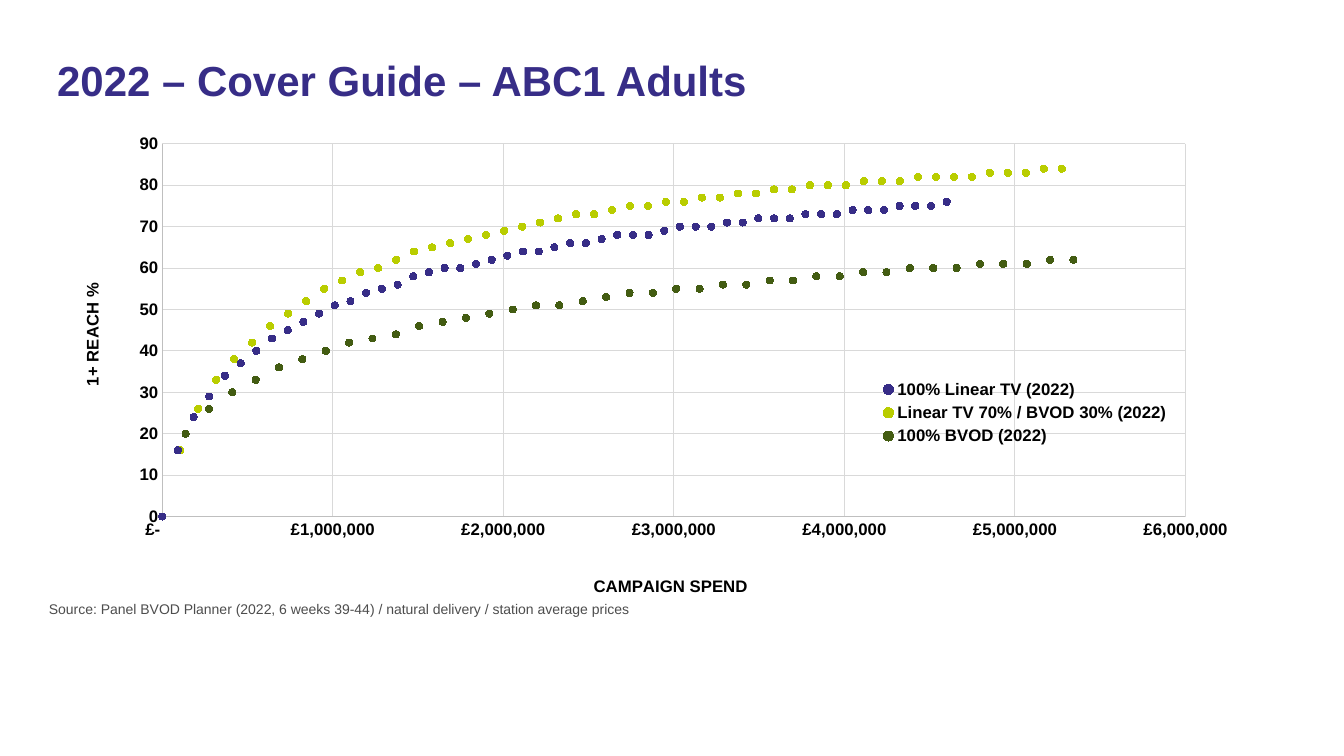
from lxml import etree
from pptx import Presentation, util as u
from pptx.chart.data import XyChartData
from pptx.dml.color import RGBColor
from pptx.enum import chart as charts, text
from pptx.oxml.ns import qn

COLOURS = {
    "title": "372D87",
    "linear": "372D87",
    "mixed": "B9CD00",
    "bvod": "435C12",
    "text": "000000",
    "source": "4D4D4D",
    "grid": "D9D9D9",
    "axis": "BFBFBF",
}

SERIES = [
    ("100% Linear TV (2022)", "linear", 92000,
     [0, 16, 24, 29, 34, 37, 40, 43, 45, 47, 49, 51, 52, 54, 55, 56, 58,
      59, 60, 60, 61, 62, 63, 64, 64, 65, 66, 66, 67, 68, 68, 68, 69, 70,
      70, 70, 71, 71, 72, 72, 72, 73, 73, 73, 74, 74, 74, 75, 75, 75, 76]),
    ("Linear TV 70% / BVOD 30% (2022)", "mixed", 105500,
     [0, 16, 26, 33, 38, 42, 46, 49, 52, 55, 57, 59, 60, 62, 64, 65, 66,
      67, 68, 69, 70, 71, 72, 73, 73, 74, 75, 75, 76, 76, 77, 77, 78, 78,
      79, 79, 80, 80, 80, 81, 81, 81, 82, 82, 82, 82, 83, 83, 83, 84, 84]),
    ("100% BVOD (2022)", "bvod", 137000,
     [0, 20, 26, 30, 33, 36, 38, 40, 42, 43, 44, 46, 47, 48, 49, 50, 51,
      51, 52, 53, 54, 54, 55, 55, 56, 56, 57, 57, 58, 58, 59, 59, 60, 60,
      60, 61, 61, 61, 62, 62]),
]

POUNDS = '_-"£"* #,##0_-;-"£"* #,##0_-;_-"£"* "-"??_-;_-@_-'


class CoverGuide:
    """Holds the slide and its style, and draws each kind of element."""

    EMU_PER_PX = 914400 / 100.8
    FONT = "Arial"

    def __init__(self, presentation):
        presentation.slide_width = self.px(1344)
        presentation.slide_height = self.px(756)
        self.slide = presentation.slides.add_slide(presentation.slide_layouts[5])

    def px(self, length):
        return u.Emu(round(length * self.EMU_PER_PX))

    def colour(self, name):
        return RGBColor.from_string(COLOURS[name])

    def style(self, font, size, colour, bold):
        font.name, font.size, font.bold = self.FONT, u.Pt(size), bold
        font.color.rgb = self.colour(colour)

    def fill_text(self, shape, box, words, size, colour, bold=False, spacing=1.0):
        shape.left, shape.top, shape.width, shape.height = map(self.px, box)
        frame = shape.text_frame
        frame.word_wrap = True
        frame.auto_size = text.MSO_AUTO_SIZE.NONE
        frame.vertical_anchor = text.MSO_ANCHOR.TOP
        paragraph = frame.paragraphs[0]
        paragraph.alignment = text.PP_ALIGN.LEFT
        paragraph.line_spacing = spacing
        run = paragraph.add_run()
        run.text = words
        self.style(run.font, size, colour, bold)

    def title(self, box, words):
        self.fill_text(self.slide.shapes.title, box, words, 30, "title", True, 0.9)

    def note(self, box, words):
        shape = self.slide.shapes.add_textbox(*map(self.px, box))
        self.fill_text(shape, box, words, 10, "source")

    def place(self, element, index, **layout_values):
        layout = element.find(qn("c:layout"))
        if layout is not None:
            element.remove(layout)
        layout = etree.Element(qn("c:layout"))
        element.insert(index, layout)
        manual = etree.SubElement(layout, qn("c:manualLayout"))
        for name, value in layout_values.items():
            etree.SubElement(manual, qn("c:" + name)).set("val", str(value))

    def axis(self, axis, words, maximum, step, number_format, rotation, x, y):
        axis.minimum_scale, axis.maximum_scale = 0, maximum
        axis.major_unit = step
        axis.major_tick_mark = axis.minor_tick_mark = charts.XL_TICK_MARK.NONE
        axis.has_major_gridlines = True
        for part, colour in ((axis.major_gridlines, "grid"), (axis, "axis")):
            part.format.line.color.rgb = self.colour(colour)
            part.format.line.width = u.Pt(0.75)
        axis.tick_labels.number_format = number_format
        axis.tick_labels.number_format_is_linked = False
        self.style(axis.tick_labels.font, 12, "text", True)
        run = axis.axis_title.text_frame.paragraphs[0].add_run()
        run.text = words
        self.style(run.font, 12, "text", True)
        title = axis.axis_title._element
        body = title.find(".//" + qn("a:bodyPr"))
        body.set("rot", str(rotation * 60000))
        body.set("vert", "horz")
        self.place(title, 1, xMode="edge", yMode="edge", x=x, y=y)

    def scatter(self, box):
        data = XyChartData()
        for name, _, step, reach in SERIES:
            series = data.add_series(name)
            for index, value in enumerate(reach):
                series.add_data_point(index * step, value)
        frame = self.slide.shapes.add_chart(
            charts.XL_CHART_TYPE.XY_SCATTER, *map(self.px, box), data)
        chart = frame.chart
        chart.has_title = False
        self.style(chart.font, 12, "text", True)
        chart.plots[0].vary_by_categories = False
        for series, (_, colour, _, _) in zip(chart.plots[0].series, SERIES):
            series.smooth = False
            series.format.line.fill.background()
            marker = series.marker
            marker.style, marker.size = charts.XL_MARKER_STYLE.CIRCLE, 5
            marker.format.fill.solid()
            marker.format.fill.fore_color.rgb = self.colour(colour)
            marker.format.line.color.rgb = self.colour(colour)
        self.axis(chart.category_axis, "CAMPAIGN SPEND", 6000000, 1000000,
                  POUNDS, 0, 0.44, 0.95)
        self.axis(chart.value_axis, "1+ REACH %", 90, 10, "0", -90, 0.01, 0.33)
        chart.has_legend = True
        legend = chart.legend
        legend.position = charts.XL_LEGEND_POSITION.RIGHT
        legend.include_in_layout = True
        self.style(legend.font, 12, "text", True)
        self.place(legend._element, 1, xMode="edge", yMode="edge",
                   x=0.68, y=0.53, w=0.25, h=0.16)
        plot_area = chart._chartSpace.find(".//" + qn("c:plotArea"))
        self.place(plot_area, 0, layoutTarget="inner", xMode="edge",
                   yMode="edge", x=0.08, y=0.04, w=0.86, h=0.79)


def main():
    presentation = Presentation()
    guide = CoverGuide(presentation)
    guide.title((47, 55, 1250, 113), "2022 – Cover Guide – ABC1 Adults")
    guide.scatter((67, 125, 1190, 476))
    guide.note((39, 596, 1250, 33),
               "Source: Panel BVOD Planner (2022, 6 weeks 39-44) / "
               "natural delivery / station average prices")
    presentation.save("out.pptx")


if __name__ == "__main__":
    main()
